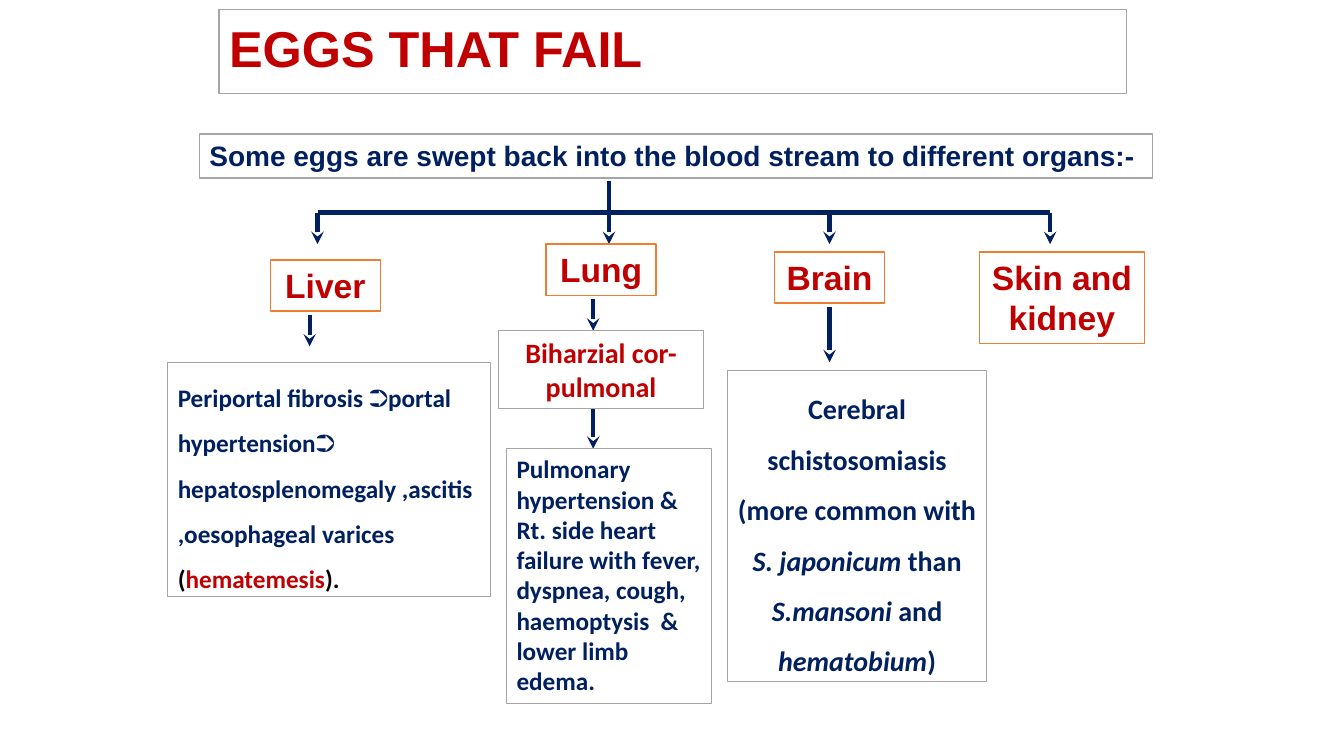
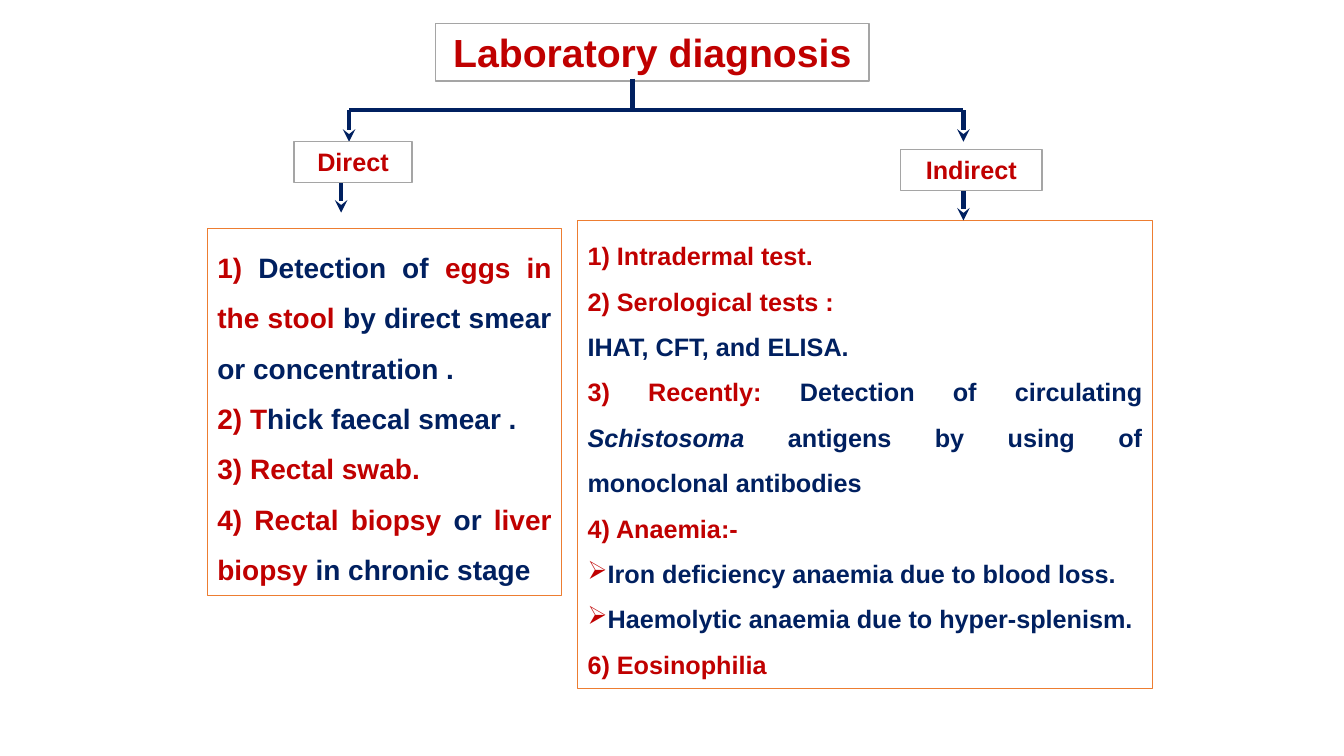
from lxml import etree
from pptx import Presentation
from pptx import util as u
from pptx.dml.color import RGBColor
from pptx.enum import shapes, text
from pptx.oxml import ns

COLORS = {"red": "C00000", "navy": "002060", "black": "000000",
          "white": "FFFFFF", "gray": "A5A5A5", "orange": "ED7D31"}
RGB = {name: RGBColor.from_string(code) for name, code in COLORS.items()}
LEFT, CENTER, JUSTIFY = (text.PP_ALIGN.LEFT, text.PP_ALIGN.CENTER,
                         text.PP_ALIGN.JUSTIFY)
FRAME = {"word_wrap": True, "auto_size": text.MSO_AUTO_SIZE.NONE,
         "margin_left": u.Inches(0.1), "margin_right": u.Inches(0.1),
         "margin_top": u.Inches(0.05), "margin_bottom": u.Inches(0.05)}

deck = Presentation()
deck.slide_width, deck.slide_height = u.Inches(13.33), u.Inches(7.5)
# Square grid: 96 rows, with 128 columns centred on the slide
UNIT = deck.slide_height / 96
ORIGIN = (deck.slide_width - 128 * UNIT) / 2


def fill_box(box, area, paragraphs, size, border="gray", align=CENTER,
             font="Arial", spacing=1, anchor=text.MSO_ANCHOR.TOP, width=1):
    """Place a box on the grid; a paragraph is (style, words) runs,
    optionally led by "bullet" or an alignment of its own."""
    col, row, cols, rows = area
    box.left, box.top = int(ORIGIN + col * UNIT), int(row * UNIT)
    box.width, box.height = int(cols * UNIT), int(rows * UNIT)
    box.fill.solid()
    box.fill.fore_color.rgb = RGB["white"]
    box.line.color.rgb = RGB[border]
    box.line.width = u.Pt(width)
    frame = box.text_frame
    for name, value in FRAME.items():
        setattr(frame, name, value)
    frame.vertical_anchor = anchor
    for index, runs in enumerate(paragraphs):
        para = frame.add_paragraph() if index else frame.paragraphs[0]
        lead = None if isinstance(runs[0], tuple) else runs[0]
        bullet = lead == "bullet"
        props = para._p.get_or_add_pPr()
        props.set("marL", "0")
        props.set("indent", str(-u.Inches(0.12) if bullet else 0))
        if bullet:
            color = etree.SubElement(props, ns.qn("a:buClr"))
            etree.SubElement(color, ns.qn("a:srgbClr"), val=COLORS["red"])
            etree.SubElement(props, ns.qn("a:buFont"), typeface="Wingdings")
            etree.SubElement(props, ns.qn("a:buChar"), char="Ø")
        else:
            etree.SubElement(props, ns.qn("a:buNone"))
        para.alignment = LEFT if bullet else align if lead is None else lead
        para.line_spacing = spacing
        para.space_before = u.Pt(0)
        for style, words in runs if lead is None else runs[1:]:
            color, *slant = style.split()
            run = para.add_run()
            run.text = words
            for name, value in {"name": font, "size": u.Pt(size),
                                "bold": True, "italic": bool(slant)}.items():
                setattr(run.font, name, value)
            run.font.color.rgb = RGB[color]


def draw_lines(slide, lines, arrow):
    for x1, y1, x2, y2 in lines:
        line = slide.shapes.add_connector(
            shapes.MSO_CONNECTOR.STRAIGHT, int(ORIGIN + x1 * UNIT),
            int(y1 * UNIT), int(ORIGIN + x2 * UNIT), int(y2 * UNIT))
        line.line.color.rgb = RGB["navy"]
        line.line.width = u.Pt(3)
        if arrow:
            etree.SubElement(line.line._get_or_add_ln(), ns.qn("a:tailEnd"),
                             type="stealth")
        etree.SubElement(line._element.spPr, ns.qn("a:effectLst"))


# Slide 1: organs reached by the eggs
organs_slide = deck.slides.add_slide(deck.slide_layouts[5])
fill_box(organs_slide.shapes.title, (6.5, 1.2, 115.2, 10.7),
         [[("red", "EGGS THAT FAIL")]], 36, align=LEFT, spacing=0.9,
         anchor=text.MSO_ANCHOR.MIDDLE)
draw_lines(organs_slide, [(56, 23, 56, 27), (19, 27, 112, 27)], False)
draw_lines(organs_slide, [(col, 27, col, 31) for col in (19, 56, 84, 112)],
           True)
draw_lines(organs_slide, [(18, 40, 18, 44), (54, 38, 54, 42),
                          (54, 52, 54, 57), (84, 39, 84, 46)], True)

organs = [("Liver", (13, 33, 14, 6.5)), ("Lung", (48, 31, 14, 6.5)),
          ("Brain", (77, 32, 14, 6.5)),
          ("Skin and kidney", (103, 32, 21, 11.6))]
effects = [
    ((0, 46, 41, 29.8), 18, LEFT, 1.5, [
        ("navy", "Periportal fibrosis ⮊portal hypertension⮊ "
                 "hepatosplenomegaly ,ascitis ,oesophageal varices"),
        ("black", " ("), ("red", "hematemesis"), ("black", ").")]),
    ((42, 42, 26, 9.9), 20, CENTER, 1, [("red", "Biharzial cor-pulmonal")]),
    ((43, 57, 26, 32.3), 18, LEFT, 1, [
        ("navy", "Pulmonary hypertension & Rt. side heart failure with "
                 "fever, dyspnea, cough, haemoptysis  & lower limb edema.")]),
    ((71, 47, 33, 39.5), 20, CENTER, 1.5, [
        ("navy", "Cerebral schistosomiasis (more common with "),
        ("navy italic", "S. japonicum"), ("navy", " than "),
        ("navy italic", "S.mansoni"), ("navy", " and "),
        ("navy italic", "hematobium"), ("navy", ")")]),
]
boxes = [((4, 17, 121, 5.6), [[("navy", "Some eggs are swept back into the "
                                "blood stream to different organs:-")]],
          20, {"align": LEFT})]
boxes += [(area, [[("red", organ)]], 24, {"border": "orange"})
          for organ, area in organs]
boxes += [(area, [runs], size, {"align": align, "spacing": spacing,
                                "font": "Calibri", "width": 0.75})
          for area, size, align, spacing, runs in effects]

# Slide 2: direct and indirect diagnosis
diagnosis_slide = deck.slides.add_slide(deck.slide_layouts[3])
fill_box(diagnosis_slide.shapes.title, (34, 3, 55, 7.3),
         [[("red", "Laboratory diagnosis")]], 28)
draw_lines(diagnosis_slide, [(59, 10, 59, 14), (23, 14, 101, 14)], False)
draw_lines(diagnosis_slide, [(23, 14, 23, 18), (101, 14, 101, 18),
                             (22, 23, 22, 27), (101, 24, 101, 28)], True)
branches = [("Direct", (16, 18, 15, 5.2)), ("Indirect", (93, 19, 18, 5.2))]
direct = [
    [("red", "1)"), ("navy", " Detection of "), ("red", "eggs in the stool"),
     ("navy", " by direct smear or concentration .")],
    [("red", "2) T"), ("navy", "hick faecal smear .")],
    [("red", "3) Rectal swab.")],
    [("red", "4) Rectal biopsy "), ("navy", "or "), ("red", "liver biopsy "),
     ("navy", "in chronic stage")],
]
indirect = [
    [("red", "1) Intradermal test.")],
    [("red", "2) Serological tests :")],
    [("navy", "IHAT, CFT, and ELISA.")],
    [("red", "3) Recently: "), ("navy", "Detection of circulating "),
     ("navy italic", "Schistosoma"),
     ("navy", " antigens by using of monoclonal antibodies")],
    [LEFT, ("red", "4) Anaemia:-")],
    ["bullet", ("navy", "Iron deficiency anaemia due to blood loss.")],
    ["bullet", ("navy", "Haemolytic anaemia due to hyper-splenism.")],
    [LEFT, ("red", "6) Eosinophilia")],
]
methods = [(1, (5, 29, 45, 46.6), direct, 20),
           (2, (52, 28, 73, 59.4), indirect, 18)]
for slot, area, paragraphs, size in methods:
    fill_box(diagnosis_slide.placeholders[slot], area, paragraphs, size,
             border="orange", align=JUSTIFY, spacing=1.5)

labels = [(area, [[("red", branch)]], 18, {}) for branch, area in branches]
for slide, group in ((organs_slide, boxes), (diagnosis_slide, labels)):
    for area, paragraphs, size, style in group:
        box = slide.shapes.add_shape(shapes.MSO_SHAPE.RECTANGLE, 0, 0, 0, 0)
        box.shadow.inherit = False
        fill_box(box, area, paragraphs, size, **style)

deck.save("out.pptx")
